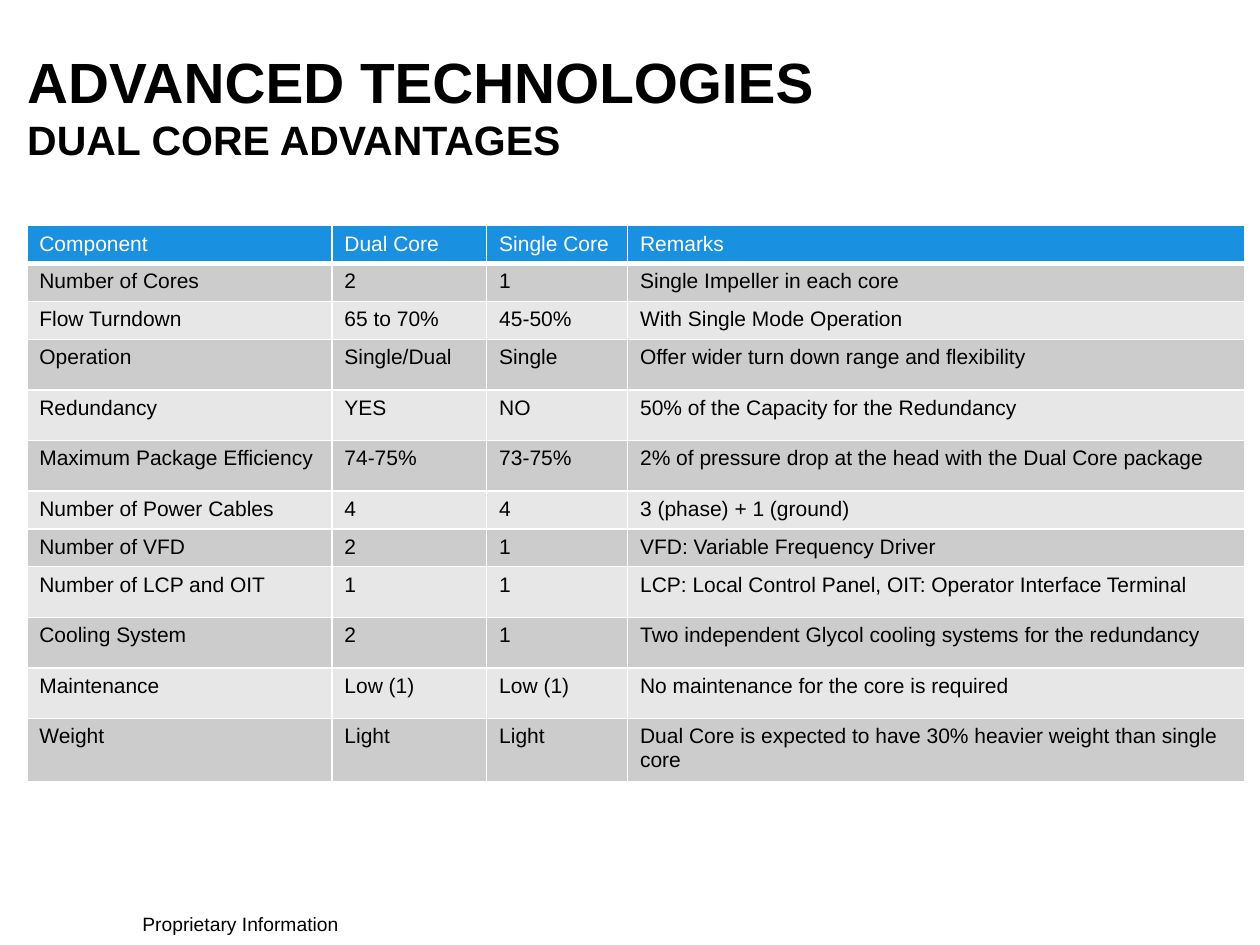
from lxml.etree import SubElement
from pptx import Presentation
from pptx.dml.color import RGBColor
from pptx.enum.text import MSO_ANCHOR, MSO_AUTO_SIZE
from pptx.oxml.ns import qn
from pptx.util import Cm, Pt

BLACK = RGBColor(0x00, 0x00, 0x00)
WHITE = RGBColor(0xFF, 0xFF, 0xFF)
BLUE = RGBColor(0x1A, 0x90, 0xE0)
DARK_BAND = RGBColor(0xCC, 0xCC, 0xCC)
LIGHT_BAND = RGBColor(0xE7, 0xE7, 0xE7)

SHORT, TALL = 0.61, 1.02
COLUMN_WIDTHS = [6.15, 3.12, 2.84, 12.45]
ROWS = [
    (SHORT, "Component", "Dual Core", "Single Core", "Remarks"),
    (SHORT, "Number of Cores", "2", "1", "Single Impeller in each core"),
    (SHORT, "Flow Turndown", "65 to 70%", "45-50%", "With Single Mode Operation"),
    (TALL, "Operation", "Single/Dual", "Single", "Offer wider turn down range and flexibility"),
    (TALL, "Redundancy", "YES", "NO", "50% of the Capacity for the Redundancy"),
    (TALL, "Maximum Package Efficiency", "74-75%", "73-75%",
     "2% of pressure drop at the head with the Dual Core package"),
    (SHORT, "Number of Power Cables", "4", "4", "3 (phase) + 1 (ground)"),
    (SHORT, "Number of VFD", "2", "1", "VFD: Variable Frequency Driver"),
    (TALL, "Number of LCP and OIT", "1", "1",
     "LCP: Local Control Panel, OIT: Operator Interface Terminal"),
    (TALL, "Cooling System", "2", "1",
     "Two independent Glycol cooling systems for the redundancy"),
    (TALL, "Maintenance", "Low (1)", "Low (1)", "No maintenance for the core is required"),
    (TALL, "Weight", "Light", "Light",
     "Dual Core is expected to have 30% heavier weight than single core"),
]


def add_span(para, text, size, color=BLACK, bold=False):
    span = para.add_run()
    span.text = text
    span.font.color.rgb = color
    formats = {"name": "Arial", "size": Pt(size), "bold": bold}
    for name, value in formats.items():
        setattr(span.font, name, value)


def add_frame(page, left, top, width, height, **formats):
    box = page.shapes.add_textbox(Cm(left), Cm(top), Cm(width), Cm(height))
    for name, value in formats.items():
        setattr(box.text_frame, name, value)
    return box.text_frame


def add_title(page, left, top, width, height):
    frame = add_frame(page, left, top, width, height, word_wrap=True,
                      vertical_anchor=MSO_ANCHOR.TOP, margin_top=Cm(0.25))
    para = frame.paragraphs[0]
    add_span(para, "ADVANCED TECHNOLOGIES", 32.4, bold=True)
    para.add_line_break()
    add_span(para, "DUAL CORE ADVANTAGES", 23.4, bold=True)


def add_borders(cell, bottom_width):
    properties = cell._tc.get_or_add_tcPr()
    widths = {"a:lnL": 1, "a:lnR": 1, "a:lnT": 1, "a:lnB": bottom_width}
    for side, width in widths.items():
        line = SubElement(properties, qn(side), w=str(Pt(width)))
        fill = SubElement(line, qn("a:solidFill"))
        SubElement(fill, qn("a:srgbClr"), val=str(WHITE))


def add_comparison(page, left, top):
    width, height = sum(COLUMN_WIDTHS), sum(row[0] for row in ROWS)
    table = page.shapes.add_table(len(ROWS), len(COLUMN_WIDTHS), Cm(left), Cm(top),
                                  Cm(width), Cm(height)).table
    for column, column_width in zip(table.columns, COLUMN_WIDTHS):
        column.width = Cm(column_width)
    for index, (row_height, *texts) in enumerate(ROWS):
        header = index == 0
        band = BLUE if header else DARK_BAND if index % 2 else LIGHT_BAND
        table.rows[index].height = Cm(row_height)
        for cell, text in zip(table.rows[index].cells, texts):
            add_borders(cell, 3 if header else 1)
            cell.fill.solid()
            cell.fill.fore_color.rgb = band
            add_span(cell.text_frame.paragraphs[0], text, 12, WHITE if header else BLACK)


def add_footer(page, left, top, width, height):
    frame = add_frame(page, left, top, width, height, word_wrap=False,
                      auto_size=MSO_AUTO_SIZE.SHAPE_TO_FIT_TEXT)
    add_span(frame.paragraphs[0], "Proprietary Information", 11)


def main():
    deck = Presentation()
    deck.slide_width, deck.slide_height = Cm(25.4), Cm(19.05)
    page = deck.slides.add_slide(deck.slide_layouts[6])

    # Footer, title and comparison table
    add_footer(page, 2.62, 18.26, 4.5, 0.73)
    add_title(page, 0.3, 0.69, 22.86, 1.57)
    add_comparison(page, 0.54, 4.55)

    deck.save("out.pptx")


if __name__ == "__main__":
    main()
